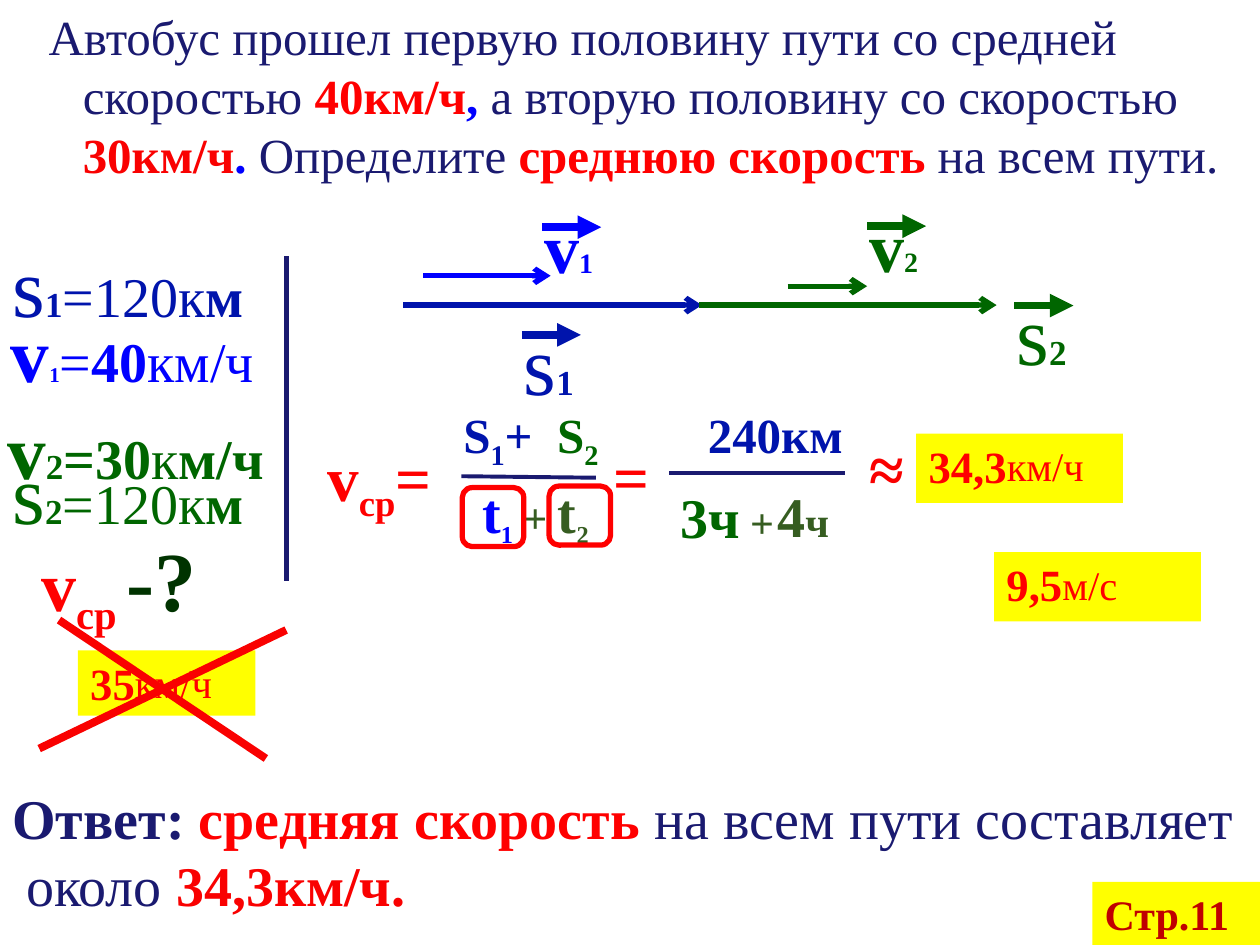
from dataclasses import dataclass
from typing import NamedTuple, Optional

from lxml import etree
from pptx import Presentation
from pptx.dml.color import RGBColor
from pptx.enum.shapes import MSO_CONNECTOR, MSO_SHAPE
from pptx.enum.text import MSO_ANCHOR, MSO_AUTO_SIZE, PP_ALIGN
from pptx.oxml.ns import qn
from pptx.util import Cm, Pt

STRAIGHT = MSO_CONNECTOR.STRAIGHT
ROUNDED = MSO_SHAPE.ROUNDED_RECTANGLE
TOP, MIDDLE = MSO_ANCHOR.TOP, MSO_ANCHOR.MIDDLE
GROW = MSO_AUTO_SIZE.SHAPE_TO_FIT_TEXT
LEFT = PP_ALIGN.LEFT


@dataclass(frozen=True)
class Theme:
    font: str = "Times New Roman"
    ink: str = "1A1A70"
    red: str = "FF0000"
    scarlet: str = "F90101"
    crimson: str = "C00000"
    blue: str = "0000FF"
    navy: str = "0014AC"
    green: str = "006600"
    olive: str = "365D21"
    dark_green: str = "003300"
    yellow: str = "FFFF00"
    giant: int = 48
    symbol: int = 44
    large: int = 40
    formula: int = 36
    value: int = 32
    body: int = 28
    small: int = 24
    index: int = 20
    vector_index: int = 16
    tiny: int = 12


T = Theme()


class Run(NamedTuple):
    text: str
    size: int
    color: str
    bold: bool = True
    lowered: bool = False
    tracking: int = 0  # extra points after each character


class Paragraph(NamedTuple):
    runs: list[Run]
    line_points: Optional[int] = None
    margin: float = 0
    indent: float = 0


class Label(NamedTuple):
    left: float
    top: float
    width: float
    height: float
    paragraphs: list[Paragraph]
    fill: Optional[str] = None
    anchor: int = TOP
    wrap: bool = True


class Line(NamedTuple):
    x1: float
    y1: float
    x2: float
    y2: float
    color: str
    width: float
    head: Optional[str] = None


class Vector(NamedTuple):
    left: float
    top: float
    width: float
    height: float
    runs: list[Run]


def draw_label(shapes, label: Label) -> None:
    shape = shapes.add_textbox(Cm(label.left), Cm(label.top), Cm(label.width), Cm(label.height))
    if label.fill:
        shape.fill.solid()
        shape.fill.fore_color.rgb = RGBColor.from_string(label.fill)
    frame = shape.text_frame
    frame.word_wrap, frame.auto_size = label.wrap, GROW
    frame.vertical_anchor = label.anchor
    for number, item in enumerate(label.paragraphs):
        paragraph = frame.add_paragraph() if number else frame.paragraphs[0]
        paragraph.alignment = LEFT
        if item.line_points:
            paragraph.line_spacing = Pt(item.line_points)
        properties = paragraph._p.get_or_add_pPr()
        properties.set("marL", str(Cm(item.margin)))
        properties.set("indent", str(Cm(item.indent)))
        for part in item.runs:
            run = paragraph.add_run()
            run.text = part.text
            font = run.font
            font.name, font.size, font.bold = T.font, Pt(part.size), part.bold
            font.color.rgb = RGBColor.from_string(part.color)
            if part.lowered:
                font._element.set("baseline", "-25000")
            if part.tracking:
                font._element.set("spc", str(part.tracking * 100))


def draw_line(shapes, line: Line) -> None:
    connector = shapes.add_connector(STRAIGHT, Cm(line.x1), Cm(line.y1), Cm(line.x2), Cm(line.y2))
    connector.line.color.rgb = RGBColor.from_string(line.color)
    connector.line.width = Pt(line.width)
    if line.head:
        etree.SubElement(connector.line._get_or_add_ln(), qn("a:tailEnd"), type=line.head)
    etree.SubElement(connector._element.spPr, qn("a:effectLst"))


def draw_vector(shapes, vector: Vector) -> None:
    """A letter with an index and a short arrow above it."""
    group = shapes.add_group_shape().shapes
    draw_label(group, Label(*vector[:4], [Paragraph(vector.runs)]))
    x, y = vector.left + 0.21, vector.top + 0.6
    draw_line(group, Line(x, y, x + 1.19, y, vector.runs[0].color, 4.5, "triangle"))


def draw_frame(shapes, left: float, top: float) -> None:
    shape = shapes.add_shape(ROUNDED, Cm(left), Cm(top), Cm(1.24), Cm(1.19))
    shape.shadow.inherit = False
    shape.fill.background()
    shape.line.color.rgb = RGBColor.from_string(T.red)
    shape.line.width = Pt(3)


def distance(number: str, color: str) -> list[Run]:
    return [Run("s", T.giant, color, False), Run(number, T.index, color)]


def speed(number: str, color: str) -> list[Run]:
    return [Run("v", T.large, color), Run(number, T.vector_index, color)]


def given_distance(top: float, number: str, color: str) -> Label:
    runs = distance(number, color) + [Run("=120к", T.value, color, False), Run("м", T.value, color)]
    return Label(0, top, 5.36, 1.45, [Paragraph(runs, 30)])


def result(left: float, top: float, width: float, height: float, number: str, unit: str) -> Label:
    runs = [Run(number, T.symbol, T.red, lowered=True), Run(unit, T.large, T.red, False, True)]
    return Label(left, top, width, height, [Paragraph(runs, 30)], T.yellow)


def formula(left: float, top: float, width: float, height: float, *runs: Run, margin: float = 0) -> Label:
    return Label(left, top, width, height, [Paragraph(list(runs), margin=margin)])


PROBLEM = Label(0, 0, 25.4, 3.84, [Paragraph([
    Run("Автобус прошел первую половину пути со средней скоростью ", T.body, T.ink, False),
    Run("40км/ч", T.body, T.red), Run(",", T.body, T.blue),
    Run(" а вторую половину со скоростью ", T.body, T.ink, False),
    Run("30км/ч", T.body, T.scarlet), Run(".", T.body, T.blue),
    Run(" Определите ", T.body, T.ink, False), Run("среднюю скорость", T.body, T.red),
    Run(" на всем пути.", T.body, T.ink, False)], margin=1.42, indent=-0.69)], anchor=MIDDLE)

GIVEN = [
    given_distance(5.56, "1", T.navy),
    Label(-0.03, 6.83, 5.77, 1.42, [Paragraph([
        Run("v", T.symbol, T.blue), Run("1", T.tiny, T.blue), Run("=", T.value, T.blue, False),
        Run("40", T.value, T.blue), Run("км/ч", T.value, T.blue, False)], 30)]),
    Label(-0.1, 8.94, 6.15, 1.32, [Paragraph([
        Run("v", T.symbol, T.green), Run("2", T.index, T.green), Run("=30", T.value, T.green),
        Run("к", T.value, T.green, False), Run("м/ч", T.value, T.green)], 26)]),
    given_distance(9.73, "2", T.green),
    formula(0.58, 10.52, 4.37, 2.31, Run("v", T.large, T.red),
            Run("ср ", T.large, T.red, lowered=True), Run("-?", T.giant, T.dark_green)),
]

VECTORS = [
    Vector(10.31, 6.15, 1.78, 2.31, distance("1", T.navy)),
    Vector(10.72, 3.98, 1.98, 1.96, speed("1", T.blue)),
    Vector(20.24, 5.56, 1.78, 2.31, distance("2", T.green)),
    Vector(17.27, 3.96, 1.98, 1.96, speed("2", T.green)),
]

LINES = [
    Line(5.77, 11.71, 5.77, 5.16, T.ink, 3),
    Line(8.13, 6.15, 14.15, 6.15, T.navy, 3, "arrow"),
    Line(8.53, 5.56, 11.1, 5.56, T.blue, 3, "arrow"),
    Line(14.1, 6.15, 20.09, 6.15, T.green, 3, "arrow"),
    Line(15.88, 5.77, 17.48, 5.77, T.green, 3, "arrow"),
    Line(9.3, 9.6, 12.01, 9.63, T.ink, 2.25),
    Line(13.49, 9.53, 17.04, 9.53, T.ink, 2.25),
]

SOLUTION = [
    formula(6.35, 8.71, 3.18, 1.8, Run("v", T.formula, T.red),
            Run("ср", T.formula, T.red, lowered=True), Run("=", T.formula, T.red)),
    formula(9.09, 8.03, 4.01, 1.45, Run("S", T.body, T.navy), Run("1", T.body, T.navy, lowered=True),
            Run("+", T.body, T.navy), Run(" ", T.body, T.navy, tracking=7),
            Run("S", T.body, T.green), Run("2", T.body, T.green, lowered=True)),
    formula(9.47, 9.5, 2.82, 1.63, Run("t", T.value, T.blue), Run("1", T.small, T.blue, lowered=True),
            Run(" + ", T.small, T.olive), Run("t", T.value, T.olive),
            Run("2", T.small, T.olive, lowered=True)),
    formula(12.12, 8.69, 1.4, 1.8, Run("=", T.formula, T.red)),
    formula(14.02, 7.75, 3.76, 1.8, Run("240км", T.body, T.navy), Run(" ", T.formula, T.navy)),
    formula(13.46, 9.6, 2.59, 1.63, Run("3ч", T.value, T.green), Run(" +", T.small, T.olive)),
    formula(15.21, 9.58, 2.18, 1.63, Run("4", T.value, T.olive), Run("ч", T.small, T.olive), margin=0.21),
    formula(17.27, 8.53, 1.4, 1.8, Run("≈", T.formula, T.scarlet)),
    result(1.57, 13.11, 3.58, 1.32, "35", "км/ч"),
    result(20.04, 11.13, 4.17, 1.4, "9,5", "м/с"),
    result(18.47, 8.74, 4.17, 1.4, "34,3", "км/ч"),
]

CROSS = [Line(1.19, 12.5, 5.36, 15.29, T.scarlet, 4.5), Line(0.79, 15.09, 5.77, 12.7, T.scarlet, 4.5)]

ANSWER = Label(0, 15.67, 25.37, 3, [
    Paragraph([Run("Ответ: ", T.value, T.ink), Run("средняя скорость", T.value, T.red),
               Run(" на всем пути составляет", T.value, T.ink, False)]),
    Paragraph([Run("около ", T.value, T.ink, False), Run("34,3км/ч.", T.value, T.scarlet)], margin=0.28),
], wrap=False)
PAGE = Label(22.02, 17.78, 3.38, 1.27, [Paragraph([Run("Стр.11", T.small, T.crimson)])], T.yellow)


def main() -> None:
    presentation = Presentation()
    presentation.slide_width, presentation.slide_height = Cm(25.4), Cm(19.05)
    shapes = presentation.slides.add_slide(presentation.slide_layouts[6]).shapes
    # Problem, given values and motion diagram
    for label in [PROBLEM, *GIVEN]:
        draw_label(shapes, label)
    for line in LINES:
        draw_line(shapes, line)
    for vector in VECTORS:
        draw_vector(shapes, vector)
    # Solution, with both times framed and the wrong mean crossed out
    for label in SOLUTION:
        draw_label(shapes, label)
    draw_frame(shapes, 9.32, 9.83)
    draw_frame(shapes, 11.07, 9.8)
    for line in CROSS:
        draw_line(shapes, line)
    # Answer and page reference
    for label in (ANSWER, PAGE):
        draw_label(shapes, label)
    presentation.save("out.pptx")


if __name__ == "__main__":
    main()
